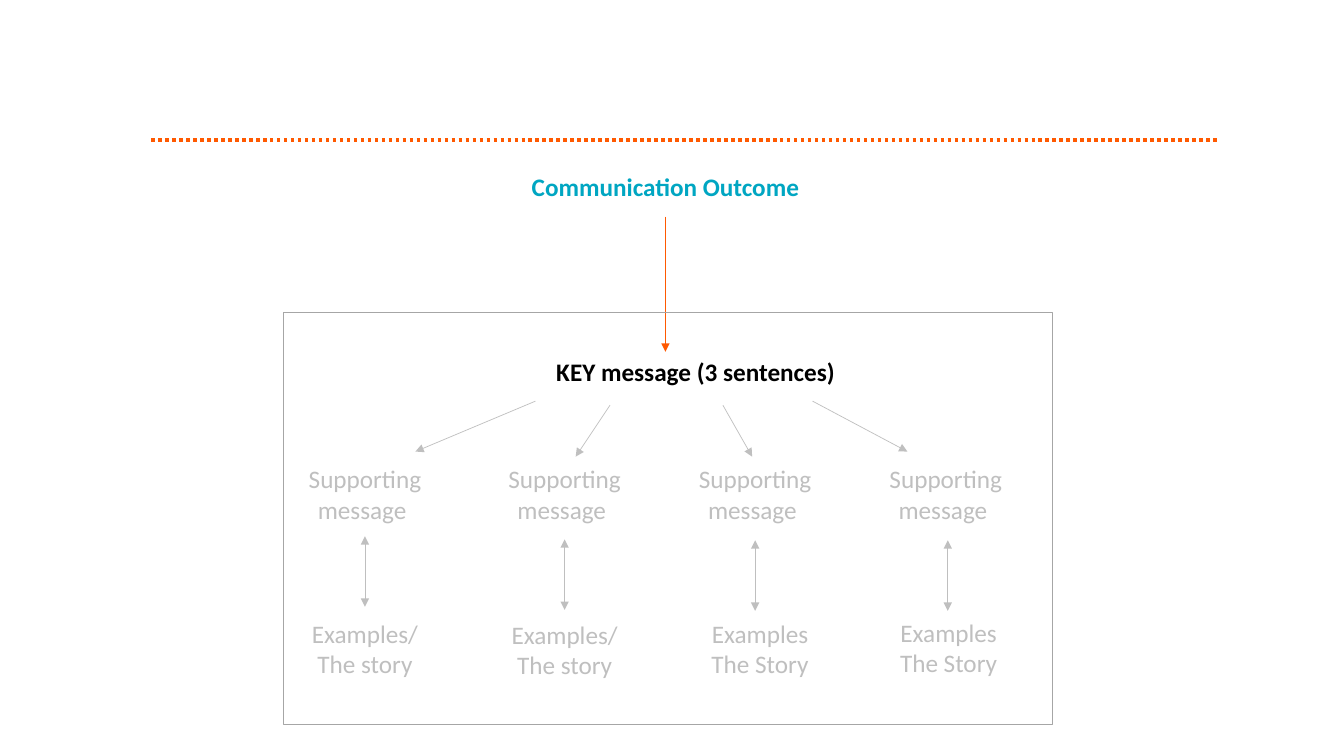
"""Build a message-tree slide: outcome, key message, supporting messages and stories."""
from lxml.etree import SubElement
from pptx import Presentation
from pptx.dml.color import RGBColor
from pptx.enum.dml import MSO_LINE
from pptx.enum.shapes import MSO_CONNECTOR as Connector, MSO_SHAPE as Shape
from pptx.enum.text import MSO_AUTO_SIZE as AutoSize, PP_ALIGN as Align
from pptx.oxml.ns import qn
from pptx.util import Inches, Pt

COLORS = {
    "orange": "FF5900",
    "teal": "00A6C2",
    "black": "000000",
    "light": "BFBFBF",
    "frame": "A6A6A6",
}
OUTCOME = "Communication Outcome"
KEY_MESSAGE = "KEY message (3 sentences)"
SUPPORT = "Supporting message "
SUPPORT_TOP = 4.55
STORY_WIDTH = 2.12
BLOCK_HEIGHT = 0.71

COLUMNS = [
    {"center": 3.62, "width": 1.97, "branch": (5.31, 3.98, 4.12, 4.48),
     "link": (3.62, 5.32), "story": (3.62, 6.08), "lines": ["Examples/", "The story"]},
    {"center": 5.6, "width": 1.78, "branch": (6.05, 4.02, 5.71, 4.53),
     "link": (5.6, 5.35), "story": (5.6, 6.09), "lines": ["Examples/", "The story"]},
    {"center": 7.49, "width": 1.78, "branch": (7.17, 4.02, 7.46, 4.53),
     "link": (7.49, 5.36), "story": (7.51, 6.08), "lines": [" Examples", " The Story"]},
    {"center": 9.38, "width": 1.78, "branch": (8.06, 3.98, 9, 4.48),
     "link": (9.4, 5.36), "story": (9.38, 6.07), "lines": [" Examples", " The Story"]},
]
LINK_LENGTH = 0.7


def color(name):
    return RGBColor.from_string(COLORS[name])


def add_text(slide, center, top, width, height, lines, shade, bold=False):
    box = slide.shapes.add_textbox(
        Inches(center - width / 2), Inches(top), Inches(width), Inches(height))
    frame = box.text_frame
    frame.word_wrap = True
    frame.auto_size = AutoSize.SHAPE_TO_FIT_TEXT
    frame.text = "\n".join(lines)
    for para in frame.paragraphs:
        para.alignment = Align.CENTER
        para.font.name = "Calibri"
        para.font.size = Pt(18)
        para.font.bold = bold
        para.font.color.rgb = color(shade)


def add_line(slide, ends, shade, width=0.5, dash=None, arrows=()):
    line = slide.shapes.add_connector(
        Connector.STRAIGHT, *(Inches(value) for value in ends))
    line.line.color.rgb = color(shade)
    line.line.width = Pt(width)
    if dash:
        line.line.dash_style = dash
    outline = line.line._get_or_add_ln()
    for end in arrows:
        SubElement(outline, qn(f"a:{end}"), type="triangle")
    SubElement(line._element.spPr, qn("a:effectLst"))


def main():
    deck = Presentation()
    deck.slide_width, deck.slide_height = Inches(13.33), Inches(7.5)
    slide = deck.slides.add_slide(deck.slide_layouts[6])

    add_line(slide, (1.5, 1.39, 12.09, 1.39), "orange", 2.5, MSO_LINE.ROUND_DOT)
    add_text(slide, 6.6, 1.65, 5, 0.4, [OUTCOME], "teal", True)
    add_text(slide, 6.9, 3.49, 2.97, 0.4, [KEY_MESSAGE], "black", True)
    add_line(slide, (6.6, 2.15, 6.6, 3.49), "orange", arrows=["tailEnd"])

    for column in COLUMNS:
        add_text(slide, column["center"], SUPPORT_TOP, column["width"],
                 BLOCK_HEIGHT, [SUPPORT], "light")
        add_line(slide, column["branch"], "light", arrows=["tailEnd"])
        x, top = column["link"]
        add_line(slide, (x, top, x, top + LINK_LENGTH), "light",
                 arrows=["headEnd", "tailEnd"])
        add_text(slide, *column["story"], STORY_WIDTH, BLOCK_HEIGHT,
                 column["lines"], "light")

    border = slide.shapes.add_shape(
        Shape.RECTANGLE, Inches(2.81), Inches(3.1), Inches(7.63), Inches(4.09))
    border.shadow.inherit = False
    border.fill.background()
    border.line.color.rgb = color("frame")
    border.line.width = Pt(1)

    deck.save("out.pptx")


if __name__ == "__main__":
    main()
